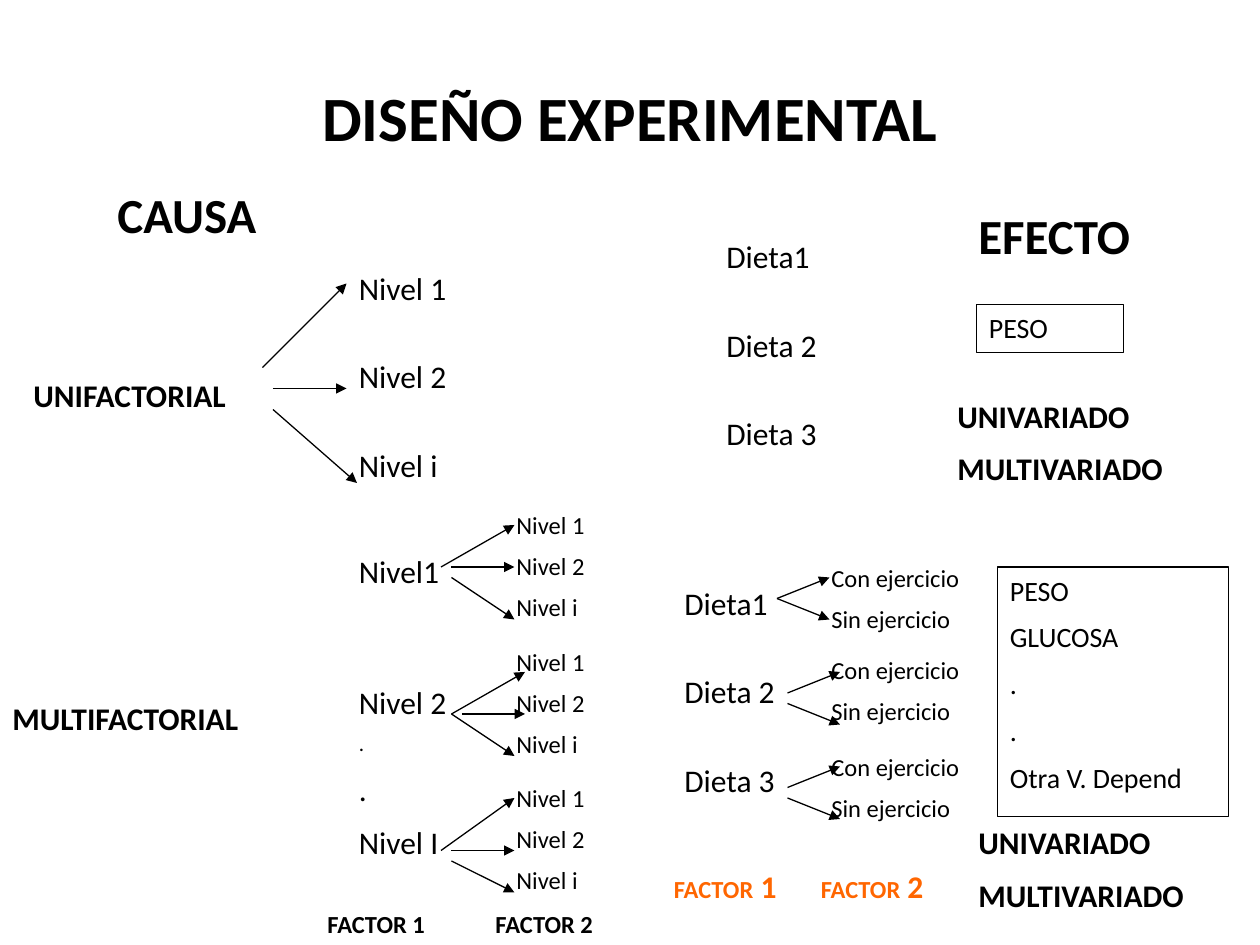
from dataclasses import dataclass

from lxml.etree import SubElement
from pptx import Presentation
from pptx.dml.color import RGBColor
from pptx.enum.shapes import MSO_CONNECTOR, MSO_SHAPE
from pptx.enum.text import MSO_ANCHOR, PP_ALIGN
from pptx.oxml.ns import qn
from pptx.util import Inches, Pt


@dataclass(frozen=True)
class Theme:
    font: str = "Calibri"
    ink: RGBColor = RGBColor(0, 0, 0)
    accent: RGBColor = RGBColor(0xFF, 0x66, 0x00)
    title: int = 36
    heading: int = 28
    body: int = 18
    measure: int = 16
    small: int = 14
    tiny: int = 12
    line: float = 0.75
    spacing: float = 0.47
    level_gap: int = 29
    branch_gap: int = 53


THEME = Theme()
PX = Inches(1) // 120


def px(*values):
    return [v * PX for v in values]


def style(r, size, bold=False, color=THEME.ink):
    r.font.name = THEME.font
    r.font.size = Pt(size)
    r.font.bold = bold
    r.font.color.rgb = color


def fill_text(sp, lines, size, bold=False, gap=None):
    tf = sp.text_frame
    tf.word_wrap = True
    tf.vertical_anchor = MSO_ANCHOR.TOP
    tf.text = "\n".join(lines)
    for i, p in enumerate(tf.paragraphs):
        p.alignment = PP_ALIGN.LEFT
        if i:
            p.space_before = Pt(gap or round(size * THEME.spacing, 1))
        for r in p.runs:
            style(r, size, bold)
    return tf


def add_text(s, box, lines, size, bold=False, gap=None):
    return fill_text(s.shapes.add_textbox(*px(*box)), lines, size, bold, gap)


def add_frame(s, box, lines):
    sp = s.shapes.add_shape(MSO_SHAPE.RECTANGLE, *px(*box))
    sp.shadow.inherit = False
    sp.fill.background()
    sp.line.color.rgb = THEME.ink
    sp.line.width = Pt(THEME.line)
    fill_text(sp, lines, THEME.measure)


def add_arrows(s, x, y, arrows):
    for x1, y1, x2, y2 in arrows:
        cxn = s.shapes.add_connector(
            MSO_CONNECTOR.STRAIGHT, *px(x + x1, y + y1, x + x2, y + y2))
        cxn.line.color.rgb = THEME.ink
        cxn.line.width = Pt(THEME.line)
        SubElement(cxn.line._get_or_add_ln(), qn("a:tailEnd"), type="triangle")
        SubElement(cxn._element.spPr, qn("a:effectLst"))


def add_header(s, x, y):
    tf = add_text(s, (x, y, 1080, 150), ["DISEÑO EXPERIMENTAL"], THEME.title, True)
    tf.vertical_anchor = MSO_ANCHOR.MIDDLE
    tf.paragraphs[0].alignment = PP_ALIGN.CENTER
    add_text(s, (x + 40, y + 134, 210, 68), ["CAUSA"], THEME.heading, True)
    add_text(s, (x + 860, y + 154, 250, 68), ["EFECTO"], THEME.heading, True)


def add_single_factor(s, x, y):
    add_text(s, (x, y + 102, 260, 48), ["UNIFACTORIAL"], THEME.body, True)
    add_text(s, (x + 310, y, 130, 228), ["Nivel 1", "Nivel 2", "Nivel i"],
             THEME.body, gap=THEME.level_gap)
    add_arrows(s, x, y, [(240, 120, 310, 120), (230, 100, 310, 20),
                         (240, 140, 320, 210)])


def add_multi_factor(s, x, y):
    add_text(s, (x, y + 180, 290, 48), ["MULTIFACTORIAL"], THEME.body, True)
    tf = add_text(s, (x + 330, y + 40, 120, 324),
                  ["Nivel1", "Nivel 2", ".", ".", "Nivel I"], THEME.body)
    tf.paragraphs[1].space_before = Pt(THEME.branch_gap)
    small_dot = tf.paragraphs[2]
    small_dot.space_before = Pt(round(THEME.tiny * THEME.spacing, 1))
    small_dot.runs[0].font.size = Pt(THEME.tiny)
    branches = [
        [(10, 60, 70, 60), (0, 60, 70, 20), (10, 70, 70, 110)],
        [(20, 70, 80, 70), (10, 70, 80, 30), (10, 70, 70, 110)],
        [(10, 70, 70, 70), (0, 70, 70, 20), (10, 80, 70, 110)],
    ]
    for i, arrows in enumerate(branches):
        top = y + i * 130
        add_text(s, (x + 480, top, 130, 124), ["Nivel 1", "Nivel 2", "Nivel i"],
                 THEME.small)
        add_arrows(s, x + 420, top, arrows)
    for i, left in enumerate((300, 460), 1):
        add_text(s, (x + left, y + 380, 150, 40), [f"FACTOR {i}"], THEME.small, True)


def add_diets(s, x, y):
    add_text(s, (x, y, 130, 228), ["Dieta1", "Dieta 2", "Dieta 3"],
             THEME.body, gap=THEME.level_gap)


def add_diet_exercise(s, x, y):
    add_diets(s, x, y)
    for top, start, split in ((-20, 100, 0), (68, 110, 10), (160, 110, 10)):
        add_text(s, (x + 140, y + top, 170, 82), ["Con ejercicio", "Sin ejercicio"],
                 THEME.small)
        middle = round(top, -1) + 40
        add_arrows(s, x + start, y + middle,
                   [(0, 0, 50, -20), (0, split, 50, split + 20)])
    for i, left in enumerate((-10, 130), 1):
        tf = add_text(s, (x + left, y + 270, 190, 48), ["FACTOR"], THEME.small, True)
        p = tf.paragraphs[0]
        p.add_run().text = f" {i}"
        for r, size in zip(p.runs, (THEME.small, THEME.body)):
            style(r, size, True, THEME.accent)


def add_effect(s, box, measures, gap):
    x, y, w, h = box
    add_frame(s, box, measures)
    add_text(s, (x - 30, y + h + gap, 260, 102), ["UNIVARIADO", "MULTIVARIADO"],
             THEME.body, True)


def main():
    prs = Presentation()
    prs.slide_width, prs.slide_height = px(1200, 900)
    s = prs.slides.add_slide(prs.slide_layouts[6])
    add_header(s, 60, 36)
    add_single_factor(s, 20, 250)
    add_multi_factor(s, 0, 480)
    add_diets(s, 680, 220)
    add_diet_exercise(s, 640, 550)
    add_effect(s, (930, 290, 140, 46), ["PESO"], 36)
    add_effect(s, (950, 540, 220, 238),
               ["PESO", "GLUCOSA", ".", ".", "Otra V. Depend"], 0)
    prs.save("out.pptx")


if __name__ == "__main__":
    main()
